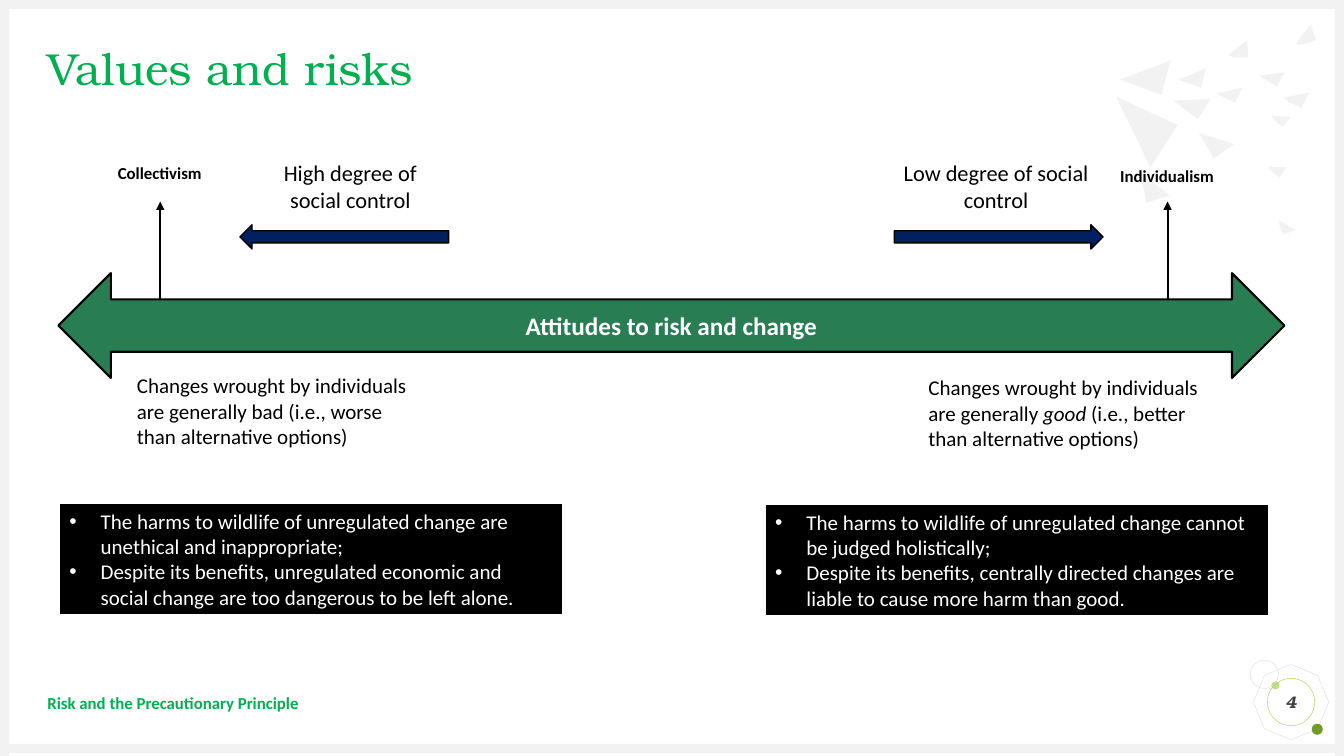
from lxml import etree
from pptx import Presentation
from pptx import util as u
from pptx.dml.color import RGBColor
from pptx.enum import shapes, text
from pptx.oxml import ns

PX = 9144
SLIDE_W, SLIDE_H, BORDER = 1333, 750, 9
SANS, SERIF = "Calibri", "TeX Gyre Bonum"

BLACK = RGBColor(0x00, 0x00, 0x00)
WHITE = RGBColor(0xFF, 0xFF, 0xFF)
GREEN = RGBColor(0x00, 0xB0, 0x50)
FOREST = RGBColor(0x29, 0x7D, 0x53)
NAVY = RGBColor(0x00, 0x20, 0x60)
CHARCOAL = RGBColor(0x40, 0x40, 0x40)
PALE = RGBColor(0xF2, 0xF2, 0xF2)
SILVER = RGBColor(0xD9, 0xD9, 0xD9)
LIME = RGBColor(0x9A, 0xCB, 0x39)
LIGHT_LIME = RGBColor(0xC2, 0xE0, 0x88)
OLIVE = RGBColor(0x74, 0x9A, 0x29)

KIND = shapes.MSO_SHAPE
MIDDLE, TOP = text.MSO_ANCHOR.MIDDLE, text.MSO_ANCHOR.TOP
CENTER, LEFT = text.PP_ALIGN.CENTER, text.PP_ALIGN.LEFT

TITLE = "Values and risks"
FOOTER = "Risk and the Precautionary Principle"
PAGE = "4"
SPECTRUM = "Attitudes to risk and change"

POLES = [
    ("Collectivism", (76, 141, 165, 61), 159),
    ("Individualism", (1075, 146, 165, 56), 1158),
]
CONTROLS = [
    ("High degree of social control", (244, 153, 207, 64), KIND.LEFT_ARROW, 238),
    ("Low degree of social control", (881, 153, 214, 64), KIND.RIGHT_ARROW, 887),
]
ATTITUDES = [
    ([("Changes wrought by individuals are generally bad "
       "(i.e., worse than alternative options)", False)], (126, 365, 296, 86)),
    ([("Changes wrought by individuals are generally ", False), ("good ", True),
      ("(i.e., better than alternative options)", False)], (911, 367, 296, 86)),
]
ARGUMENTS = [
    (["The harms to wildlife of unregulated change are unethical and inappropriate;",
      "Despite its benefits, unregulated economic and social change are too "
      "dangerous to be left alone."], (59, 499, 499, 111)),
    (["The harms to wildlife of unregulated change cannot be judged holistically;",
      "Despite its benefits, centrally directed changes are liable to cause more "
      "harm than good."], (759, 500, 499, 111)),
]
SHARDS = [
    [(1161, 60), (1152, 94), (1111, 79)],
    [(1201, 98), (1188, 118), (1164, 100)],
    [(1196, 68), (1191, 87), (1169, 79)],
    [(1232, 87), (1225, 102), (1207, 93)],
    [(1237, 40), (1238, 57), (1224, 57), (1218, 55)],
    [(1280, 116), (1272, 126), (1264, 119), (1261, 115)],
    [(1300, 24), (1305, 40), (1292, 44), (1285, 44)],
    [(1274, 72), (1266, 86), (1249, 75)],
    [(1298, 92), (1291, 107), (1278, 101), (1273, 97)],
    [(1168, 124), (1141, 166), (1107, 96)],
    [(1224, 143), (1204, 157), (1189, 132)],
    [(1276, 166), (1269, 176), (1260, 169), (1258, 165)],
    [(1160, 194), (1137, 201), (1131, 171)],
    [(1285, 228), (1273, 233), (1269, 223), (1269, 219)],
]
BADGE = [
    (KIND.OCTAGON, (1246, 662, 69, 69), None, SILVER, 22.7),
    (KIND.OVAL, (1261, 676, 8, 8), LIGHT_LIME, None, 0),
    (KIND.OVAL, (1301, 718, 11, 11), OLIVE, None, 0),
    (KIND.OVAL, (1240, 655, 28, 28), None, SILVER, 0),
]
FRAME = [
    (3, 738, SLIDE_W, BORDER),
    (0, 0, SLIDE_W, BORDER),
    (0, 0, BORDER, SLIDE_H),
    (SLIDE_W - BORDER, 0, BORDER, SLIDE_H),
]


def emu(box):
    return [length * PX for length in box]


def paint(shape, fill=None, line=None, width=0.25):
    shape.shadow.inherit = False
    if fill is None:
        shape.fill.background()
    else:
        shape.fill.solid()
        shape.fill.fore_color.rgb = fill
    if line is None:
        shape.line.fill.background()
    else:
        shape.line.color.rgb = line
        shape.line.width = u.Pt(width)


def draw(slide, kind, box, fill=None, line=None, width=0.25):
    shape = slide.shapes.add_shape(kind, *emu(box))
    paint(shape, fill, line, width)
    return shape


def write(shape, paragraphs, size, color, font=SANS, bold=False, italic=False,
          align=LEFT, anchor=MIDDLE, tight=False, grow=False, bullets=False):
    frame = shape.text_frame
    frame.word_wrap = True
    frame.vertical_anchor = anchor
    if tight:
        frame.margin_left = frame.margin_right = 0
        frame.margin_top = frame.margin_bottom = 0
    if grow:
        frame.auto_size = text.MSO_AUTO_SIZE.SHAPE_TO_FIT_TEXT
    for number, runs in enumerate(paragraphs):
        paragraph = frame.add_paragraph() if number else frame.paragraphs[0]
        paragraph.alignment = align
        if bullets:
            props = paragraph._p.get_or_add_pPr()
            props.set("marL", str(31 * PX))
            props.set("indent", str(-31 * PX))
            etree.SubElement(props, ns.qn("a:buFont"), typeface="Arial")
            etree.SubElement(props, ns.qn("a:buChar"), char="•")
        for words, slanted in runs:
            run = paragraph.add_run()
            run.text = words
            run.font.name = font
            run.font.size = u.Pt(size)
            run.font.bold = bold
            run.font.italic = italic or slanted
            run.font.color.rgb = color
    return frame


def label(slide, words, box, size, color, **style):
    area = slide.shapes.add_textbox(*emu(box))
    return write(area, [[(words, False)]], size, color, **style)


def pole_arrow(slide, x):
    arrow = slide.shapes.add_connector(
        shapes.MSO_CONNECTOR.STRAIGHT, *emu((x, 297, x, 200)))
    arrow.line.color.rgb = BLACK
    arrow.line.width = u.Pt(1.5)
    etree.SubElement(arrow.line._get_or_add_ln(), ns.qn("a:tailEnd"), type="triangle")
    etree.SubElement(arrow._element.spPr, ns.qn("a:effectLst"))


def decorate(slide):
    for kind, box, fill, line, angle in BADGE:
        draw(slide, kind, box, fill, line).rotation = angle
    for bar in FRAME:
        draw(slide, KIND.RECTANGLE, bar, PALE)
    for start, *others in SHARDS:
        outline = slide.shapes.build_freeform(*start, scale=PX)
        outline.add_line_segments(others, close=True)
        paint(outline.convert_to_shape(), PALE)


def main():
    deck = Presentation()
    deck.slide_width, deck.slide_height = emu((SLIDE_W, SLIDE_H))
    slide = deck.slides.add_slide(deck.slide_layouts[6])
    decorate(slide)

    title = label(slide, TITLE, (47, 47, 1240, 47), 32, GREEN, font=SERIF, tight=True)
    title.paragraphs[0].line_spacing = 0.9
    label(slide, FOOTER, (47, 677, 961, 40), 12, GREEN, bold=True, tight=True)
    page = draw(slide, KIND.OVAL, (1257, 673, 47, 47), line=LIME)
    write(page, [[(PAGE, False)]], 12, CHARCOAL, font=SERIF, bold=True,
          italic=True, align=CENTER, tight=True)

    spectrum = draw(slide, KIND.LEFT_RIGHT_ARROW, (58, 271, 1216, 104),
                    FOREST, BLACK, 1.5)
    caption = write(spectrum, [[(SPECTRUM, False)]], 18, WHITE, bold=True, align=CENTER)
    caption.paragraphs[0].space_after = u.Pt(10)

    for pole, box, x in POLES:
        pole_arrow(slide, x)
        label(slide, pole, box, 12, BLACK, bold=True, align=CENTER)
    for control, box, kind, x in CONTROLS:
        draw(slide, kind, (x, 223, 207, 24), NAVY, BLACK, 1)
        label(slide, control, box, 16, BLACK, align=CENTER, anchor=TOP, grow=True)
    for attitude, box in ATTITUDES:
        area = slide.shapes.add_textbox(*emu(box))
        write(area, [attitude], 15, BLACK, anchor=TOP, grow=True)
    for points, box in ARGUMENTS:
        panel = draw(slide, KIND.RECTANGLE, box, BLACK, WHITE, 0.75)
        write(panel, [[(point, False)] for point in points], 15, WHITE,
              grow=True, bullets=True)

    deck.save("out.pptx")


if __name__ == "__main__":
    main()
